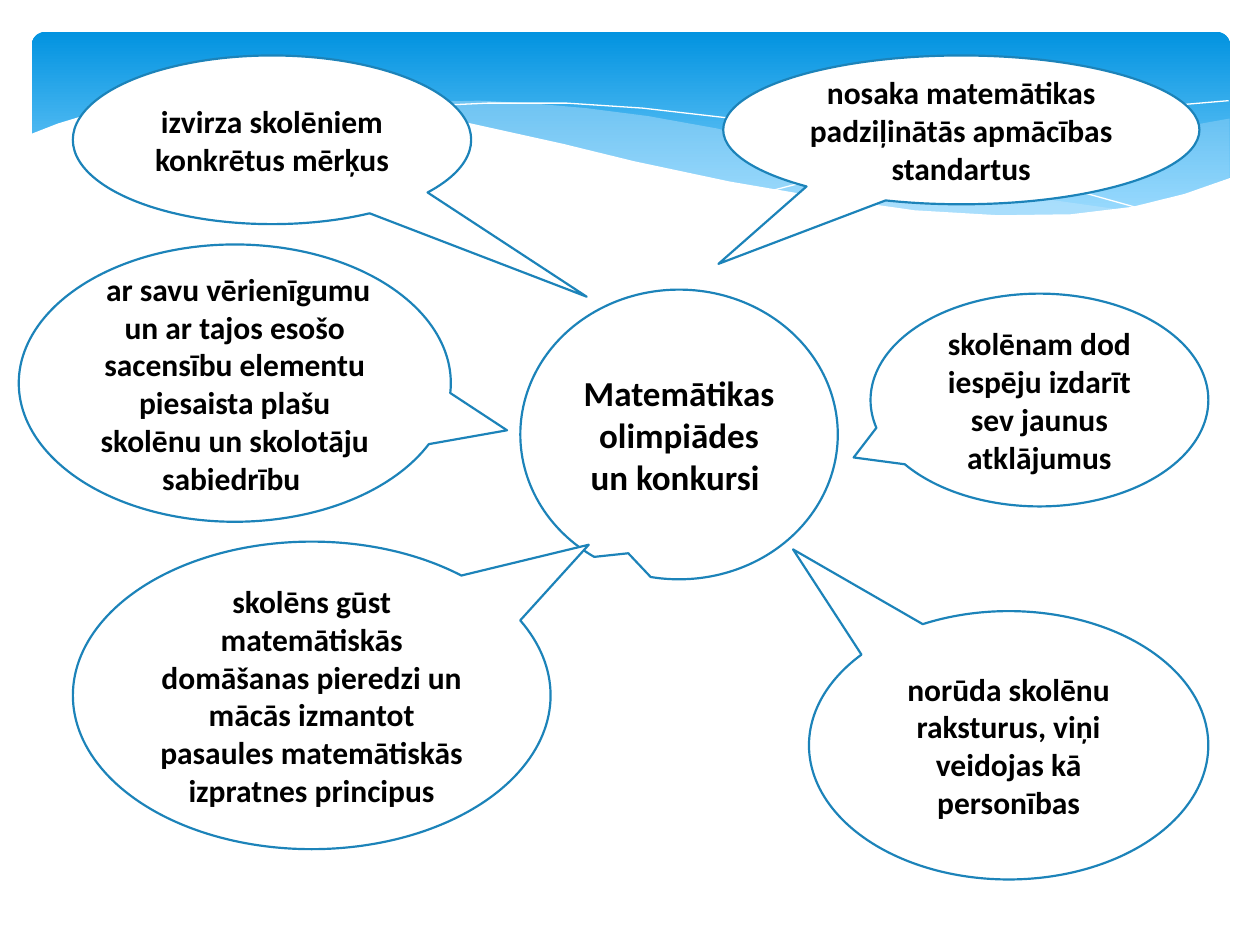
import pptx
import pptx.dml.color
import pptx.enum.shapes
import pptx.enum.text
import pptx.oxml.ns
import pptx.util
from lxml import etree

Cm = pptx.util.Cm
Pt = pptx.util.Pt
RGBColor = pptx.dml.color.RGBColor
Shape = pptx.enum.shapes.MSO_SHAPE

WHITE = RGBColor(0xFF, 0xFF, 0xFF)
BLACK = RGBColor(0x00, 0x00, 0x00)
OUTLINE_BLUE = RGBColor(0x1C, 0x83, 0xB9)
BANNER_TOP = RGBColor(0x02, 0x93, 0xE0)
BANNER_BOTTOM = RGBColor(0x83, 0xD3, 0xFE)
WAVE_BLUE = RGBColor(0xC6, 0xE7, 0xFC)

deck = pptx.Presentation()
deck.slide_width = Cm(25.4)
deck.slide_height = Cm(19.05)
page = deck.slides.add_slide(deck.slide_layouts[6])


def add_wave(points, color, opacity=100, closed=True):
    corners = [(Cm(x), Cm(y)) for x, y in points]
    builder = page.shapes.build_freeform(*corners[0])
    builder.add_line_segments(corners[1:], close=closed)
    wave = builder.convert_to_shape()
    wave.shadow.inherit = False
    if not closed:
        wave.fill.background()
        wave.line.color.rgb = color
        wave.line.width = Pt(0)
        return
    wave.fill.solid()
    wave.fill.fore_color.rgb = color
    wave.line.fill.background()
    if opacity < 100:
        qualified = pptx.oxml.ns.qn
        color_element = wave.fill._xPr.find(qualified("a:solidFill")).find(qualified("a:srgbClr"))
        etree.SubElement(color_element, qualified("a:alpha"), val=str(opacity * 1000))


def add_callout(text, left, top, width, height, pointer, size=18):
    callout = page.shapes.add_shape(
        Shape.OVAL_CALLOUT, Cm(left), Cm(top), Cm(width), Cm(height))
    callout.adjustments[0], callout.adjustments[1] = pointer
    callout.shadow.inherit = False
    callout.fill.solid()
    callout.fill.fore_color.rgb = WHITE
    callout.line.color.rgb = OUTLINE_BLUE
    callout.line.width = Pt(1.25)
    frame = callout.text_frame
    frame.word_wrap = True
    frame.vertical_anchor = pptx.enum.text.MSO_ANCHOR.MIDDLE
    para = frame.paragraphs[0]
    para.alignment = pptx.enum.text.PP_ALIGN.CENTER
    span = para.add_run()
    span.text = text
    span.font.name = "Calibri"
    span.font.size = Pt(size)
    span.font.bold = True
    span.font.color.rgb = BLACK


banner = page.shapes.add_shape(
    Shape.ROUNDED_RECTANGLE, Cm(0.64), Cm(0.64), Cm(24.16), Cm(3.96))
banner.adjustments[0] = 0.07
banner.shadow.inherit = False
banner.line.fill.background()
banner.fill.gradient()
banner.fill.gradient_angle = 270
for stop, color, position in zip(
        banner.fill.gradient_stops, (BANNER_TOP, BANNER_BOTTOM), (0, 0.9)):
    stop.color.rgb = color
    stop.position = position

right_wave = [
    (24.79, 2.39), (23.39, 2.64), (21.87, 3.0), (19.79, 3.48), (17.93, 3.86),
    (16.79, 4.06), (17.91, 4.19), (19.23, 4.32), (20.68, 4.37), (21.92, 4.32),
    (22.99, 4.14), (23.93, 3.91), (24.79, 3.58)]
middle_wave = [
    (22.68, 4.24), (21.26, 4.04), (19.69, 3.78), (17.93, 3.4), (15.98, 2.95),
    (14.45, 2.59), (13.06, 2.34), (11.81, 2.18), (10.67, 2.08), (9.65, 2.03),
    (8.33, 2.06), (7.26, 2.18), (8.69, 2.39), (10.26, 2.69), (11.4, 2.95),
    (13.46, 3.43), (15.27, 3.81), (16.89, 4.09), (18.34, 4.27), (19.94, 4.37),
    (21.29, 4.37)]
falling_line = [
    (7.85, 2.29), (8.74, 2.13), (9.83, 2.08), (11.43, 2.08), (12.95, 2.18),
    (14.78, 2.39), (16.89, 2.74), (19.3, 3.25), (21.11, 3.68), (23.04, 4.22)]
rising_line = [
    (15.57, 3.84), (17.65, 3.3), (19.71, 2.82), (21.23, 2.51), (22.73, 2.24),
    (23.83, 2.11), (24.77, 2.03)]
white_wave = [
    (24.82, 3.58), (23.88, 3.91), (22.83, 4.17), (21.59, 4.32), (20.14, 4.34),
    (18.44, 4.24), (16.46, 3.96), (14.71, 3.66), (12.78, 3.25), (11.35, 2.9),
    (9.27, 2.44), (7.42, 2.16), (5.84, 2.01), (4.5, 1.98), (3.02, 2.08),
    (1.93, 2.26), (1.17, 2.49), (0.58, 2.72), (0.58, 5.69), (24.82, 5.69)]

add_wave(right_wave, WAVE_BLUE, opacity=29)
add_wave(middle_wave, WAVE_BLUE, opacity=40)
add_wave(falling_line, WHITE, closed=False)
add_wave(rising_line, WHITE, closed=False)
add_wave(white_wave, WHITE)

add_callout("Matemātikas olimpiādes un konkursi ",
            10.49, 5.84, 6.4, 5.84, pointer=(-0.16, 0.41), size=20)

reasons = [
    ("izvirza skolēniem konkrētus mērķus", 1.47, 1.12, 8.03, 3.4, (0.79, 0.93)),
    (" ar savu vērienīgumu un ar tajos esošo sacensību elementu piesaista plašu "
     "skolēnu un skolotāju sabiedrību ", 0.38, 4.93, 8.71, 5.59, (0.63, 0.17)),
    ("skolēns gūst matemātiskās domāšanas pieredzi un mācās izmantot pasaules "
     "matemātiskās izpratnes principus", 1.47, 10.92, 9.63, 6.2, (0.58, -0.49)),
    ("nosaka matemātikas padziļinātās apmācības standartus",
     14.58, 1.12, 9.6, 3.0, (-0.51, 0.9)),
    ("skolēnam dod iespēju izdarīt sev jaunus atklājumus",
     17.55, 5.92, 6.81, 4.29, (-0.55, 0.27)),
    ("norūda skolēnu raksturus, viņi veidojas kā personības",
     16.31, 12.32, 8.05, 5.41, (-0.54, -0.73)),
]
for text, left, top, width, height, pointer in reasons:
    add_callout(text, left, top, width, height, pointer=pointer)

deck.save("out.pptx")
